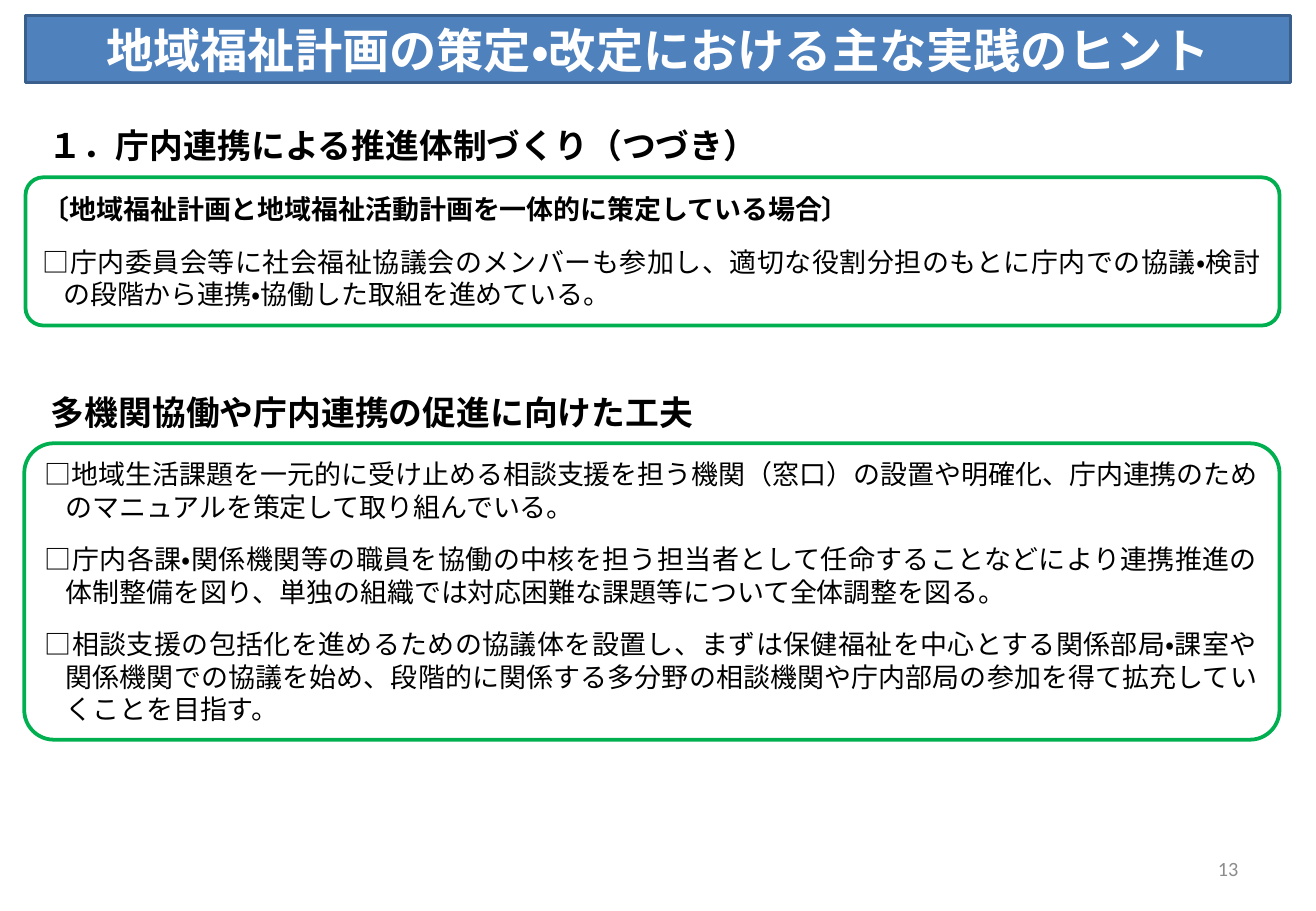
from pptx import Presentation
from pptx.dml.color import RGBColor
from pptx.enum.lang import MSO_LANGUAGE_ID as Language
from pptx.enum.shapes import MSO_SHAPE as Shape
from pptx.enum.text import MSO_ANCHOR as Anchor, MSO_AUTO_SIZE as AutoSize, PP_ALIGN as Align
from pptx.util import Inches, Pt

COLORS = {
    "banner": "4F81BD",
    "banner_line": "3A5F8C",
    "box_line": "00B050",
    "white": "FFFFFF",
    "black": "000000",
    "page_number": "8C8C8C",
}


def add_text(paragraph, text, size, font="Calibri", color="black", bold=False):
    run = paragraph.add_run()
    run.text = text
    run.font.name = font
    run.font.size = Pt(size)
    run.font.bold = bold
    run.font.color.rgb = RGBColor.from_string(COLORS[color])
    run.font.language_id = Language.JAPANESE


def set_fill_and_line(shape, fill, line, width):
    shape.fill.solid()
    shape.fill.fore_color.rgb = RGBColor.from_string(COLORS[fill])
    shape.line.color.rgb = RGBColor.from_string(COLORS[line])
    shape.line.width = Pt(width)


presentation = Presentation()
presentation.slide_width = Inches(10.83)
presentation.slide_height = Inches(7.5)
slide = presentation.slides.add_slide(presentation.slide_layouts[5])

# Title banner
title = slide.shapes.title
title.left, title.top = Inches(0.21), Inches(0.13)
title.width, title.height = Inches(10.41), Inches(0.55)
set_fill_and_line(title, "banner", "banner_line", 2)
title.text_frame.auto_size = AutoSize.NONE
title.text_frame.vertical_anchor = Anchor.MIDDLE
title.text_frame.paragraphs[0].alignment = Align.CENTER
add_text(title.text_frame.paragraphs[0], "地域福祉計画の策定・改定における主な実践のヒント",
         28, color="white", bold=True)

# Section headings
headings = [
    (0.3, 0.98, "１．庁内連携による推進体制づくり（つづき）"),
    (0.32, 3.18, "多機関協働や庁内連携の促進に向けた工夫"),
]
for left, top, text in headings:
    heading = slide.shapes.add_textbox(Inches(left), Inches(top), Inches(6.54), Inches(0.44))
    heading.text_frame.word_wrap = True
    heading.text_frame.auto_size = AutoSize.SHAPE_TO_FIT_TEXT
    add_text(heading.text_frame.paragraphs[0], text, 20, bold=True)

# Hint boxes: left, top, width, height, corner, (text, bold, space after)
hint_boxes = [
    (0.21, 1.46, 10.32, 1.22, 0.12, [
        ("〔地域福祉計画と地域福祉活動計画を一体的に策定している場合〕", True, 12),
        ("□庁内委員会等に社会福祉協議会のメンバーも参加し、適切な役割分担のもとに"
         "庁内での協議・検討の段階から連携・協働した取組を進めている。", False, 0),
    ]),
    (0.2, 3.65, 10.33, 2.44, 0.1, [
        ("□地域生活課題を一元的に受け止める相談支援を担う機関（窓口）の設置や明確化、"
         "庁内連携のためのマニュアルを策定して取り組んでいる。", False, 12),
        ("□庁内各課・関係機関等の職員を協働の中核を担う担当者として任命することなどにより"
         "連携推進の体制整備を図り、単独の組織では対応困難な課題等について全体調整を図る。",
         False, 12),
        ("□相談支援の包括化を進めるための協議体を設置し、まずは保健福祉を中心とする"
         "関係部局・課室や関係機関での協議を始め、段階的に関係する多分野の相談機関や"
         "庁内部局の参加を得て拡充していくことを目指す。", False, 12),
    ]),
]
for left, top, width, height, corner, hints in hint_boxes:
    box = slide.shapes.add_shape(Shape.ROUNDED_RECTANGLE, Inches(left), Inches(top),
                                 Inches(width), Inches(height))
    box.adjustments[0] = corner
    box.shadow.inherit = False
    set_fill_and_line(box, "white", "box_line", 2.25)
    frame = box.text_frame
    frame.word_wrap = True
    frame.vertical_anchor = Anchor.MIDDLE
    for index, (text, bold, space_after) in enumerate(hints):
        paragraph = frame.add_paragraph() if index else frame.paragraphs[0]
        paragraph.alignment = Align.JUSTIFY
        paragraph.space_after = Pt(space_after)
        properties = paragraph._p.get_or_add_pPr()
        properties.set("marL", str(Inches(0.17)))
        properties.set("indent", str(-Inches(0.17)))
        add_text(paragraph, text, 16, font="Cambria", bold=bold)

# Page number
page_number = slide.shapes.add_textbox(Inches(7.76), Inches(6.95), Inches(2.53), Inches(0.4))
page_number.text_frame.word_wrap = True
page_number.text_frame.vertical_anchor = Anchor.MIDDLE
page_number.text_frame.paragraphs[0].alignment = Align.RIGHT
add_text(page_number.text_frame.paragraphs[0], "13", 12, color="page_number")

presentation.save("out.pptx")
